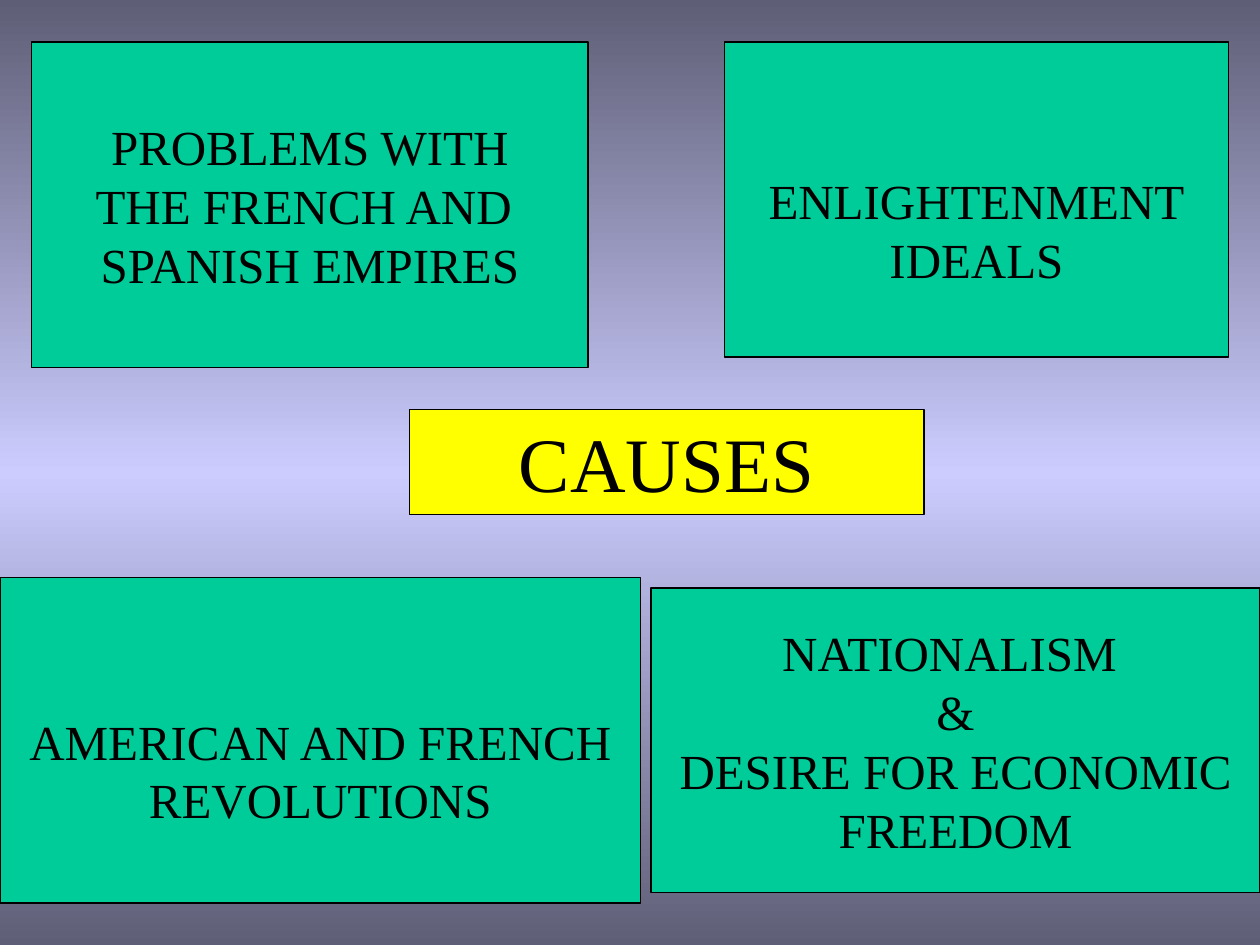
"""Build a slide that sets four causes around a central title."""
from copy import deepcopy

from pptx import Presentation
from pptx import util as u
from pptx.dml import color
from pptx.enum import shapes, text
from pptx.oxml import ns

COLORS = {"edge": "5E5E76", "glow": "CCCCFF", "title": "FFFF00",
          "cause": "00CC99", "ink": "000000"}
COLUMNS, ROWS = 120, 90
CELL = u.Inches(10) // COLUMNS
LINE_HEIGHT = u.Inches(0.47)
INSET = u.Inches(0.05)
BUTTON = shapes.MSO_SHAPE.ACTION_BUTTON_CUSTOM
RECTANGLE = shapes.MSO_SHAPE.RECTANGLE

CAUSES = [
    ((3, 4, 53, 31), ["PROBLEMS WITH", "THE FRENCH AND ", "SPANISH EMPIRES"], 0),
    ((69, 4, 48, 30), ["ENLIGHTENMENT", "IDEALS"], 1),
    ((0, 55, 61, 31), ["AMERICAN AND FRENCH", "REVOLUTIONS"], 1),
    ((62, 56, 58, 29),
     ["NATIONALISM ", "&", "DESIRE FOR ECONOMIC", "FREEDOM"], 0),
]


def rgb(name):
    """Return the named colour."""
    return color.RGBColor.from_string(COLORS[name])


def apply(target, values):
    """Set each attribute of the target from a dict."""
    for name, value in values.items():
        setattr(target, name, value)


def paint_background(slide):
    """Fill the slide with a vertical gradient that glows in the middle."""
    fill = slide.background.fill
    fill.gradient()
    fill.gradient_angle = 90
    edge, glow = fill.gradient_stops
    edge.color.rgb, glow.color.rgb = rgb("edge"), rgb("glow")
    edge.position, glow.position = 0, 0.5
    stops = next(slide.element.iter(ns.qn("a:gsLst")))
    stops.append(deepcopy(stops[0]))
    fill.gradient_stops[2].position = 1


def add_box(slide, kind, cells, lines, fill, size, wrap=False, lead=0):
    """Add an outlined box with centred lines, lowered by lead empty lines."""
    shape = slide.shapes.add_shape(kind, *(CELL * cell for cell in cells))
    shape.shadow.inherit = False
    shape.fill.solid()
    shape.fill.fore_color.rgb = rgb(fill)
    shape.line.color.rgb = rgb("ink")
    shape.line.width = u.Pt(0.75)
    frame = shape.text_frame
    apply(frame, {"word_wrap": wrap, "vertical_anchor": text.MSO_ANCHOR.MIDDLE,
                  "margin_top": INSET + lead * LINE_HEIGHT})
    for index, line in enumerate(lines):
        paragraph = frame.add_paragraph() if index else frame.paragraphs[0]
        paragraph.alignment = text.PP_ALIGN.CENTER
        run = paragraph.add_run()
        run.text = line
        apply(run.font, {"name": "Times New Roman", "size": u.Pt(size)})
        run.font.color.rgb = rgb("ink")


def main():
    """Build and save the presentation."""
    presentation = Presentation()
    apply(presentation, {"slide_width": CELL * COLUMNS,
                         "slide_height": CELL * ROWS})
    slide = presentation.slides.add_slide(presentation.slide_layouts[6])
    paint_background(slide)
    add_box(slide, RECTANGLE, (39, 39, 49, 10), ["CAUSES"], "title", 44, wrap=True)
    for cells, lines, lead in CAUSES:
        add_box(slide, BUTTON, cells, lines, "cause", 28, lead=lead)
    presentation.save("out.pptx")


if __name__ == "__main__":
    main()
